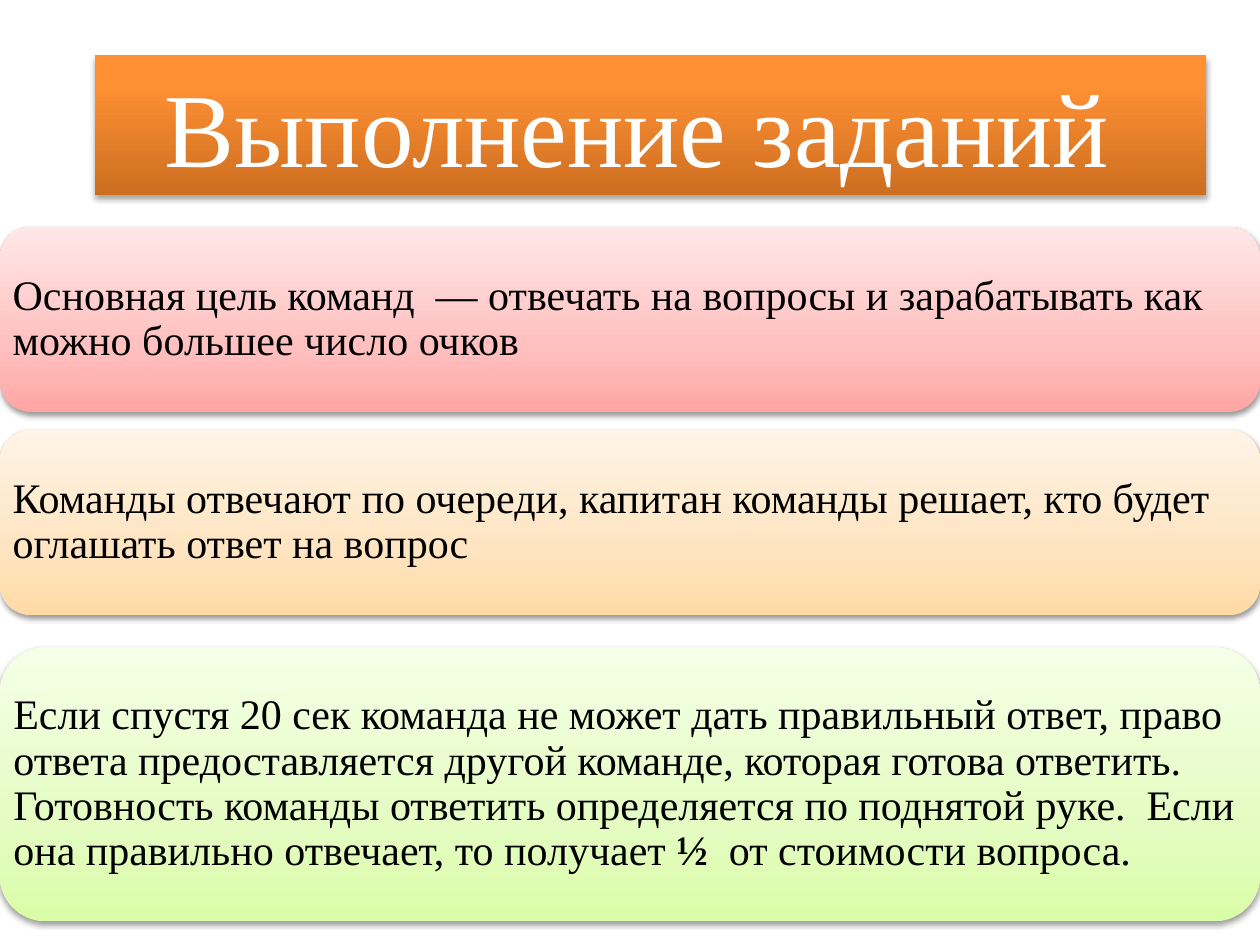
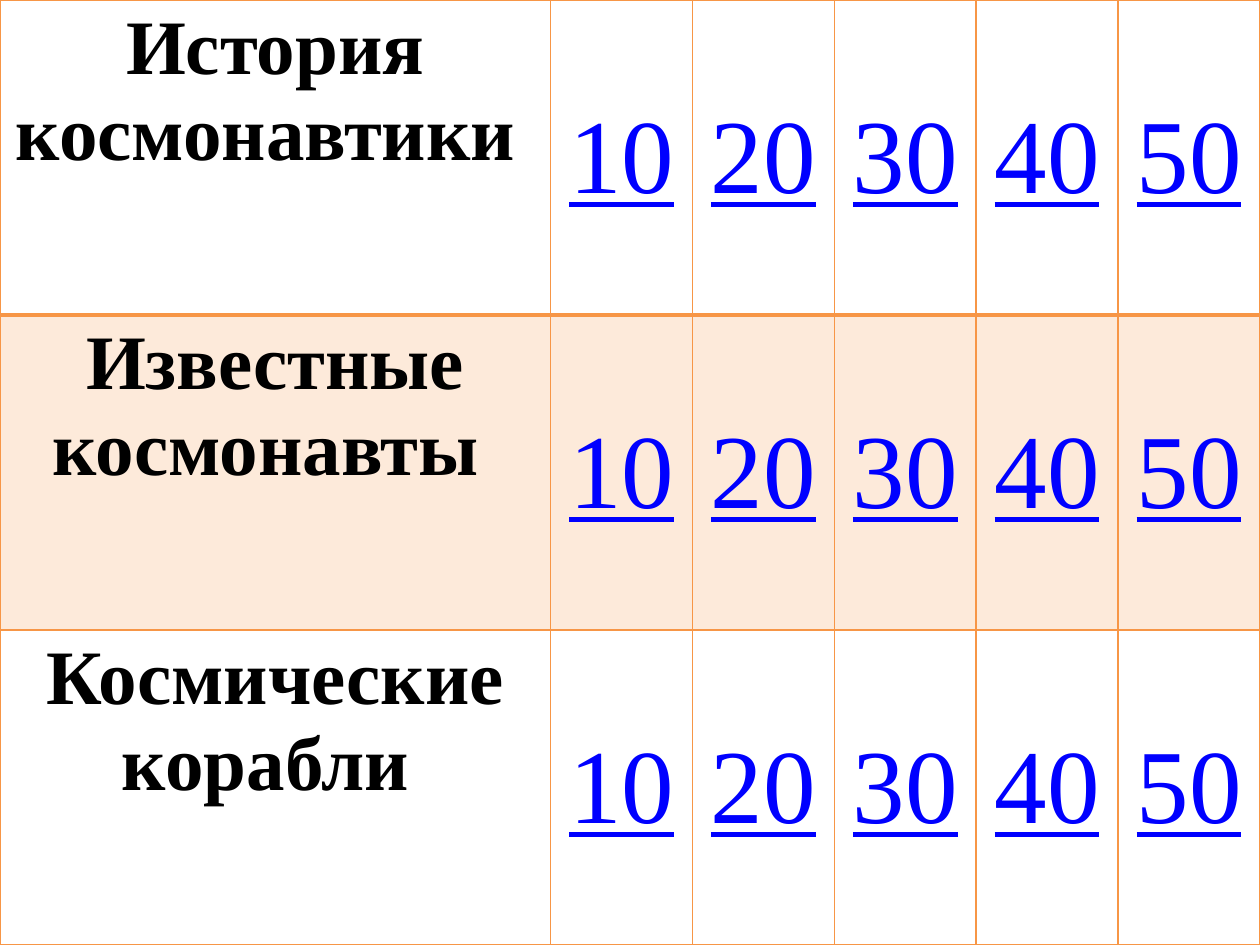
from lxml import etree
from pptx import Presentation
from pptx.dml.color import RGBColor
from pptx.enum.shapes import MSO_SHAPE
from pptx.enum.text import MSO_ANCHOR, MSO_AUTO_SIZE, PP_ALIGN
from pptx.oxml.ns import qn
from pptx.util import Inches, Pt

ROUND_RECT = MSO_SHAPE.ROUNDED_RECTANGLE
MIDDLE, TOP = MSO_ANCHOR.MIDDLE, MSO_ANCHOR.TOP
CENTER, LEFT = PP_ALIGN.CENTER, PP_ALIGN.LEFT
NO_FIT = MSO_AUTO_SIZE.NONE

WIDTH, HEIGHT = Inches(10), Inches(7.5)
TITLE_ONLY, BLANK = 5, 6
FONT = "Times New Roman"
COLORS = {
    "text": "000000", "title": "FFFFFF", "link": "0000FF",
    "border": "F79646", "band": "FDEADA",
}
GRADIENTS = {
    "title": [(0, "CC6E20"), (80, "FF9034"), (100, "FF9136")],
    "red": [(0, "FFA6A5"), (35, "FFC0BF"), (100, "FFE7E7")],
    "orange": [(0, "FFDAA5"), (35, "FEE4C0"), (100, "FFF4E7")],
    "green": [(0, "DAFDA7"), (35, "E4FCC2"), (100, "F5FFE7")],
}
TITLE_BOX = (7.5, 5.87, 88.2, 14.8)
CARDS = [
    ("red", (0, 24, 100, 19.6),
     [("Основная цель команд  — отвечать на вопросы и зарабатывать как "
       "можно большее число очков", False)]),
    ("orange", (0, 45.5, 100, 19.6),
     [("Команды отвечают по очереди, капитан команды решает, кто будет "
       "оглашать ответ на вопрос", False)]),
    ("green", (0, 68.5, 100, 29),
     [("Если спустя 20 сек команда не может дать правильный ответ, право "
       "ответа предоставляется другой команде, которая готова ответить. "
       "Готовность команды ответить определяется по поднятой руке.  Если "
       "она правильно отвечает, то получает ", False),
      ("½", True),
      ("  от стоимости вопроса.", False)]),
]
TOPICS = ["История космонавтики ", "Известные космонавты ", "Космические корабли "]
POINTS = ["10", "20", "30", "40", "50"]
TOPIC_SHARE = 0.437


def place(box):
    """Turn a box in percent of the slide into lengths."""
    x, y, w, h = box
    return [int(v * side / 100) for v, side in
            ((x, WIDTH), (y, HEIGHT), (w, WIDTH), (h, HEIGHT))]


def add_run(p, text, size, color, bold=False, underline=False):
    """Add one formatted run to a paragraph."""
    r = p.add_run()
    r.text = text
    r.font.name = FONT
    r.font.size = Pt(size)
    r.font.bold = bold
    r.font.underline = underline
    r.font.color.rgb = RGBColor.from_string(COLORS[color])


def add_color(parent, color, alpha=None):
    """Append a colour element, with opacity in percent if given."""
    clr = etree.SubElement(parent, qn("a:srgbClr"), val=color)
    if alpha is not None:
        etree.SubElement(clr, qn("a:alpha"), val=str(alpha * 1000))


def style_panel(sp, gradient, shadow_alpha, shadow_dist):
    """Give a shape a vertical gradient, no outline and a soft shadow."""
    sp.fill.gradient()
    sp.fill.gradient_angle = 90
    stops = sp.element.spPr.find(qn("a:gradFill")).find(qn("a:gsLst"))
    for gs in list(stops):
        stops.remove(gs)
    for pos, color in GRADIENTS[gradient]:
        add_color(etree.SubElement(stops, qn("a:gs"), pos=str(pos * 1000)), color)
    sp.line.fill.background()
    sp.shadow.inherit = False
    shadow = etree.SubElement(
        sp.element.spPr.find(qn("a:effectLst")), qn("a:outerShdw"),
        blurRad=str(Pt(3.1)), dist=str(Pt(shadow_dist)), dir="5400000",
        rotWithShape="0")
    add_color(shadow, "000000", shadow_alpha)


def add_title(slide, text, box):
    """Move the title placeholder to its box and format it."""
    sp = slide.shapes.title
    sp.left, sp.top, sp.width, sp.height = place(box)
    style_panel(sp, "title", 35, 1.8)
    tf = sp.text_frame
    tf.word_wrap, tf.auto_size = True, NO_FIT
    tf.vertical_anchor = MIDDLE
    p = tf.paragraphs[0]
    p.alignment = CENTER
    add_run(p, text, 60, "title")


def add_card(slide, gradient, box, runs):
    """Add a rounded card whose text starts a tenth of an inch inside."""
    sp = slide.shapes.add_shape(ROUND_RECT, *place(box))
    style_panel(sp, gradient, 38, 1.6)
    tf = sp.text_frame
    tf.word_wrap = True
    tf.vertical_anchor = MIDDLE
    corner_inset = sp.height * sp.adjustments[0] * 0.29
    margin = max(0, int(Inches(0.1) - corner_inset))
    tf.margin_left = tf.margin_right = tf.margin_top = tf.margin_bottom = margin
    p = tf.paragraphs[0]
    p.alignment = LEFT
    p.line_spacing = 0.9
    for text, bold in runs:
        add_run(p, text, 24, "text", bold)


def set_borders(cell, top, bottom):
    """Draw the four borders of a cell, in points."""
    tcPr = cell._tc.get_or_add_tcPr()
    widths = (("L", 1), ("R", 1), ("T", top), ("B", bottom))
    for i, (side, width) in enumerate(widths):
        ln = etree.Element(qn(f"a:ln{side}"), w=str(Pt(width)))
        add_color(etree.SubElement(ln, qn("a:solidFill")), COLORS["border"])
        tcPr.insert(i, ln)


def fill_cell(cell, row, col, text):
    """Fill one cell as a topic or as a points value."""
    if row % 2:
        cell.fill.solid()
        cell.fill.fore_color.rgb = RGBColor.from_string(COLORS["band"])
    else:
        cell.fill.background()
    set_borders(cell, 2 if row == 1 else 1, 2 if row == 0 else 1)
    cell.vertical_anchor = MIDDLE if col else TOP
    p = cell.text_frame.paragraphs[0]
    p.alignment = CENTER
    if col:
        add_run(p, text, 60, "link", underline=True)
    else:
        add_run(p, text, 44, "text", bold=True)


def add_board(slide, box):
    """Add the table of topics and points."""
    x, y, w, h = place(box)
    table = slide.shapes.add_table(
        len(TOPICS), len(POINTS) + 1, x, y, w, h).table
    table.first_row = table.horz_banding = False
    topic_width = int(w * TOPIC_SHARE)
    for col, column in enumerate(table.columns):
        column.width = (w - topic_width) // len(POINTS) if col else topic_width
    for row, topic in enumerate(TOPICS):
        table.rows[row].height = h // len(TOPICS)
        for col, text in enumerate([topic, *POINTS]):
            fill_cell(table.cell(row, col), row, col, text)


def build_rules(prs):
    """Build the slide with the rules of play."""
    slide = prs.slides.add_slide(prs.slide_layouts[TITLE_ONLY])
    add_title(slide, "Выполнение заданий ", TITLE_BOX)
    for gradient, box, runs in CARDS:
        add_card(slide, gradient, box, runs)


def build_board(prs):
    """Build the slide with the game board."""
    slide = prs.slides.add_slide(prs.slide_layouts[BLANK])
    add_board(slide, (0, 0, 100, 100))


def main():
    """Build and save the presentation."""
    prs = Presentation()
    prs.slide_width, prs.slide_height = WIDTH, HEIGHT
    build_rules(prs)
    build_board(prs)
    prs.save("out.pptx")


if __name__ == "__main__":
    main()
